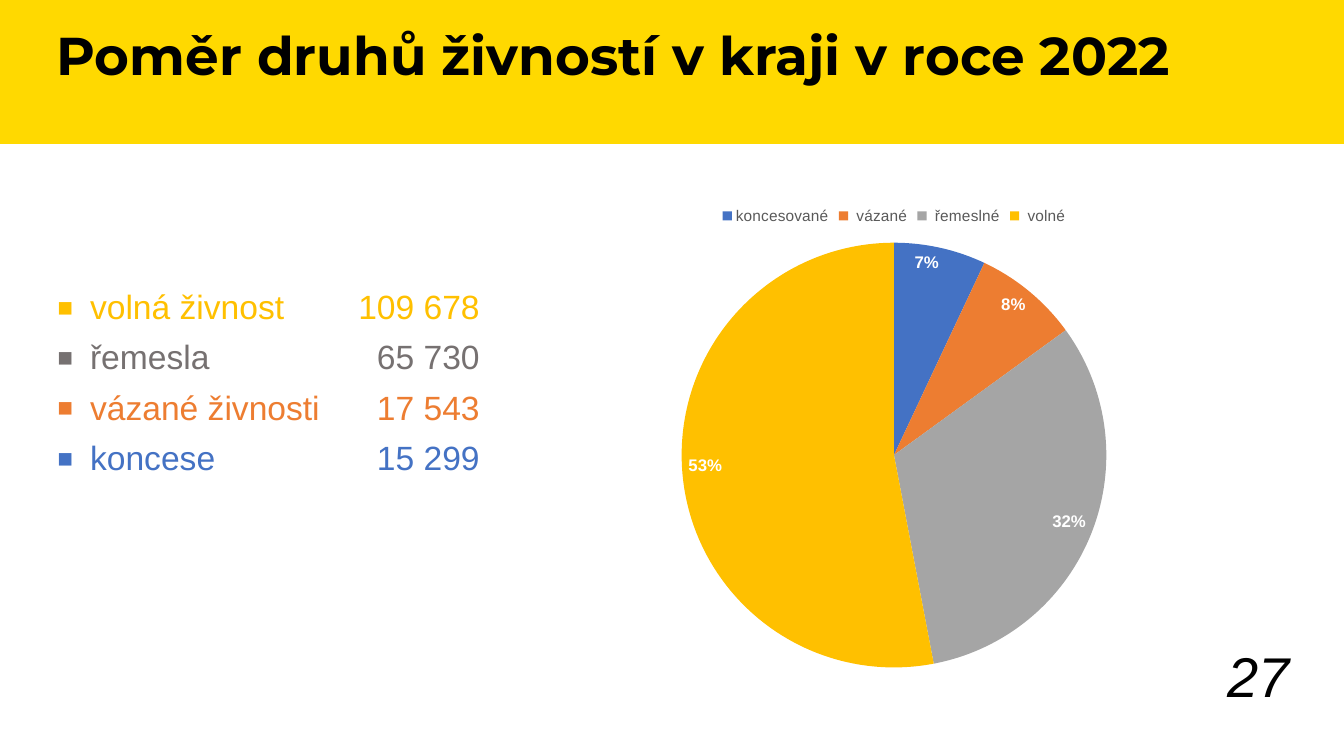
from lxml.etree import SubElement
from pptx import Presentation
from pptx.chart.data import CategoryChartData
from pptx.dml.color import RGBColor
from pptx.enum.chart import XL_CHART_TYPE, XL_LABEL_POSITION, XL_LEGEND_POSITION
from pptx.enum.shapes import MSO_SHAPE
from pptx.enum.text import MSO_ANCHOR, PP_ALIGN
from pptx.oxml.ns import qn
from pptx.util import Cm, Pt

BLACK = RGBColor(0x00, 0x00, 0x00)
WHITE = RGBColor(0xFF, 0xFF, 0xFF)
BANNER_YELLOW = RGBColor(0xFF, 0xD9, 0x00)
GOLD = RGBColor(0xFF, 0xC0, 0x00)
DARK_GRAY = RGBColor(0x76, 0x71, 0x71)
LIGHT_GRAY = RGBColor(0xA5, 0xA5, 0xA5)
LEGEND_GRAY = RGBColor(0x59, 0x59, 0x59)
ORANGE = RGBColor(0xED, 0x7D, 0x31)
BLUE = RGBColor(0x44, 0x72, 0xC4)

TRADES = [
    ("volná živnost", "109 678", GOLD),
    ("řemesla", "65 730", DARK_GRAY),
    ("vázané živnosti", "17 543", ORANGE),
    ("koncese", "15 299", BLUE),
]
SHARES = [
    ("koncesované", 7, BLUE),
    (" vázané", 8, ORANGE),
    (" řemeslné", 32, LIGHT_GRAY),
    (" volné", 53, GOLD),
]


def format_font(font, size, color, name="Arial", bold=False, italic=False):
    font.size = Pt(size)
    font.color.rgb = color
    font.name = name
    font.bold = bold
    font.italic = italic


def write_text(paragraph, text, align=PP_ALIGN.LEFT, line_spacing=1.0, **font_format):
    paragraph.alignment = align
    paragraph.line_spacing = line_spacing
    run = paragraph.add_run()
    run.text = text
    format_font(run.font, **font_format)


class SlideBuilder:
    def __init__(self, slide):
        self.slide = slide

    def banner(self, left, top, width, height, color):
        shape = self.slide.shapes.add_shape(
            MSO_SHAPE.RECTANGLE, Cm(left), Cm(top), Cm(width), Cm(height))
        shape.shadow.inherit = False
        shape.fill.solid()
        shape.fill.fore_color.rgb = color
        shape.line.fill.background()

    def text_frame(self, left, top, width, height, anchor=MSO_ANCHOR.TOP):
        box = self.slide.shapes.add_textbox(Cm(left), Cm(top), Cm(width), Cm(height))
        frame = box.text_frame
        frame.word_wrap = True
        frame.vertical_anchor = anchor
        return frame

    def text(self, text, left, top, width, height, anchor=MSO_ANCHOR.TOP, **text_format):
        frame = self.text_frame(left, top, width, height, anchor)
        write_text(frame.paragraphs[0], text, **text_format)

    def bullet_list(self, rows, left, top, width, height):
        frame = self.text_frame(left, top, width, height)
        for index, (label, count, color) in enumerate(rows):
            paragraph = frame.paragraphs[0] if index == 0 else frame.add_paragraph()
            write_text(paragraph, f"{label}\t{count}", line_spacing=0.9, size=24, color=color)
            paragraph.space_before = Pt(10 if index else 0)
            self.add_bullet(paragraph, indent=Cm(0.85), tab=Cm(10.67))

    def add_bullet(self, paragraph, indent, tab):
        properties = paragraph._p.get_or_add_pPr()
        properties.set("marL", str(indent))
        properties.set("indent", str(-indent))
        SubElement(properties, qn("a:buSzPct"), val="150000")
        SubElement(properties, qn("a:buFont"), typeface="Arial")
        SubElement(properties, qn("a:buChar"), char="▪")
        tabs = SubElement(properties, qn("a:tabLst"))
        SubElement(tabs, qn("a:tab"), pos=str(tab), algn="r")

    def pie(self, shares, left, top, width, height):
        data = CategoryChartData()
        data.categories = [name for name, value, color in shares]
        data.add_series("Series 1", [value for name, value, color in shares])
        chart = self.slide.shapes.add_chart(
            XL_CHART_TYPE.PIE, Cm(left), Cm(top), Cm(width), Cm(height), data).chart
        format_font(chart.font, size=10, color=BLACK)
        chart.has_title = False
        chart.has_legend = True
        chart.legend.position = XL_LEGEND_POSITION.TOP
        chart.legend.include_in_layout = False
        format_font(chart.legend.font, size=11, color=LEGEND_GRAY)
        plot = chart.plots[0]
        plot.vary_by_categories = True
        for index, (name, value, color) in enumerate(shares):
            fill = plot.series[0].points[index].format.fill
            fill.solid()
            fill.fore_color.rgb = color
        labels = plot.series[0].data_labels
        labels.show_percentage = True
        labels.show_value = False
        labels.number_format = "0%"
        labels.number_format_is_linked = False
        labels.position = XL_LABEL_POSITION.INSIDE_END
        format_font(labels.font, size=12, color=WHITE, bold=True)


def main():
    presentation = Presentation()
    presentation.slide_width = Cm(33.87)
    presentation.slide_height = Cm(19.05)
    builder = SlideBuilder(presentation.slides.add_slide(presentation.slide_layouts[6]))
    builder.banner(0, 0, 33.87, 3.63, BANNER_YELLOW)
    builder.text("27", 25.12, 16.54, 7.62, 1.45, anchor=MSO_ANCHOR.BOTTOM,
                 align=PP_ALIGN.RIGHT, size=40, color=BLACK, italic=True)
    builder.text("Poměr druhů živností v kraji v roce 2022", 1.17, 0.61, 31.29, 2.59,
                 line_spacing=0.9, size=38, color=BLACK, name="Montserrat", bold=True)
    builder.bullet_list(TRADES, 1.17, 7.2, 12.5, 5.2)
    builder.pie(SHARES, 14.53, 4.93, 16, 12.24)
    presentation.save("out.pptx")


if __name__ == "__main__":
    main()
